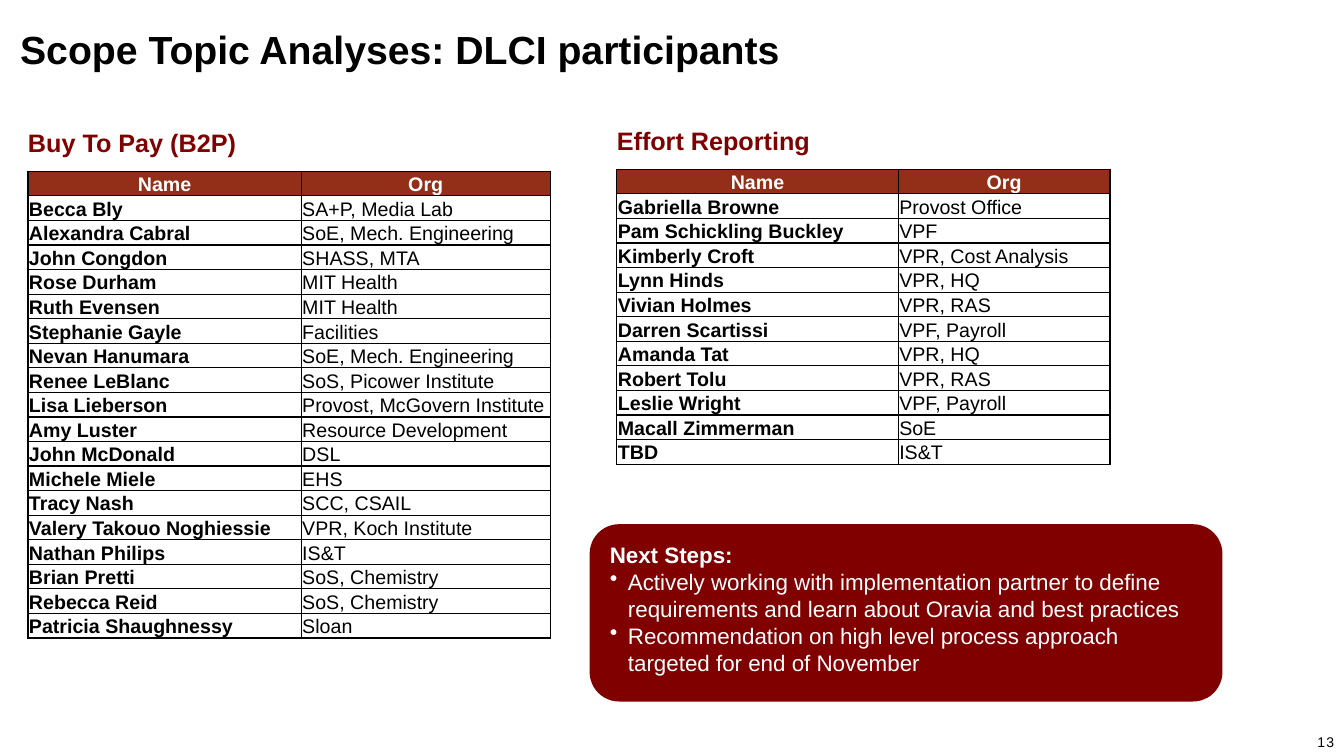
from dataclasses import dataclass

from lxml.etree import SubElement
from pptx import Presentation
from pptx.dml.color import RGBColor
from pptx.enum.shapes import MSO_SHAPE
from pptx.enum.text import MSO_ANCHOR, PP_ALIGN
from pptx.oxml.ns import qn
from pptx.util import Inches, Pt


@dataclass(frozen=True)
class Theme:
    font: str = "Arial"
    black: RGBColor = RGBColor(0, 0, 0)
    white: RGBColor = RGBColor(255, 255, 255)
    maroon: RGBColor = RGBColor(0x80, 0, 0)
    rust: RGBColor = RGBColor(0x93, 0x2F, 0x18)
    title: int = 28
    heading: int = 18
    body: int = 16
    table: int = 14
    number: int = 10


THEME = Theme()
WIDTH, HEIGHT = Inches(13.33), Inches(7.5)
COLUMN, ROW = WIDTH / 48, HEIGHT / 31.25

B2P = [
    ("Becca Bly", "SA+P, Media Lab"),
    ("Alexandra Cabral", "SoE, Mech. Engineering"),
    ("John Congdon", "SHASS, MTA"),
    ("Rose Durham", "MIT Health"),
    ("Ruth Evensen", "MIT Health"),
    ("Stephanie Gayle", "Facilities"),
    ("Nevan Hanumara", "SoE, Mech. Engineering"),
    ("Renee LeBlanc", "SoS, Picower Institute"),
    ("Lisa Lieberson", "Provost, McGovern Institute"),
    ("Amy Luster", "Resource Development"),
    ("John McDonald", "DSL"),
    ("Michele Miele", "EHS"),
    ("Tracy Nash", "SCC, CSAIL"),
    ("Valery Takouo Noghiessie", "VPR, Koch Institute"),
    ("Nathan Philips", "IS&T"),
    ("Brian Pretti", "SoS, Chemistry"),
    ("Rebecca Reid", "SoS, Chemistry"),
    ("Patricia Shaughnessy", "Sloan"),
]
EFFORT = [
    ("Gabriella Browne", "Provost Office"),
    ("Pam Schickling Buckley", "VPF"),
    ("Kimberly Croft", "VPR, Cost Analysis"),
    ("Lynn Hinds", "VPR, HQ"),
    ("Vivian Holmes", "VPR, RAS"),
    ("Darren Scartissi", "VPF, Payroll"),
    ("Amanda Tat", "VPR, HQ"),
    ("Robert Tolu", "VPR, RAS"),
    ("Leslie Wright", "VPF, Payroll"),
    ("Macall Zimmerman", "SoE"),
    ("TBD", "IS&T"),
]
NEXT_STEPS = [
    "Actively working with implementation partner to define requirements "
    "and learn about Oravia and best practices",
    "Recommendation on high level process approach targeted for end of November",
]


def grid(left, top, width, height):
    return [round(n * unit) for n, unit in zip((left, top, width, height), (COLUMN, ROW) * 2)]


def style(para, size, color, bold=False, align=PP_ALIGN.LEFT):
    para.alignment = align
    font = para.font
    font.name, font.size, font.bold = THEME.font, Pt(size), bold
    font.color.rgb = color


def add_text(page, box, lines, margin_left=0.0):
    frame = page.shapes.add_textbox(*grid(*box)).text_frame
    frame.word_wrap = True
    frame.margin_left = Inches(margin_left)
    frame.text = "\n".join(lines)
    return frame.paragraphs


def add_bullet(para):
    properties = para._p.get_or_add_pPr()
    indent = Inches(0.18)
    properties.set("marL", str(indent))
    properties.set("indent", str(-indent))
    SubElement(properties, qn("a:buChar"), char="•")


def add_borders(cell):
    properties = cell._tc.get_or_add_tcPr()
    for side in ("L", "R", "T", "B"):
        line = SubElement(properties, qn(f"a:ln{side}"), w=str(Pt(1)))
        fill = SubElement(line, qn("a:solidFill"))
        SubElement(fill, qn("a:srgbClr"), val=str(THEME.black))


def fill_cell(cell, text, header, bold):
    add_borders(cell)
    cell.fill.solid()
    cell.fill.fore_color.rgb = THEME.rust if header else THEME.white
    cell.margin_left = cell.margin_right = cell.margin_top = Inches(0.01)
    cell.margin_bottom = 0
    cell.vertical_anchor = MSO_ANCHOR.BOTTOM
    cell.text = text
    style(
        cell.text_frame.paragraphs[0],
        THEME.table,
        THEME.white if header else THEME.black,
        bold,
        PP_ALIGN.CENTER if header else PP_ALIGN.LEFT,
    )


def add_title(page, box, text):
    title = page.shapes.title
    title.left, title.top, title.width, title.height = grid(*box)
    frame = title.text_frame
    frame.margin_left = frame.margin_right = frame.margin_top = frame.margin_bottom = 0
    frame.vertical_anchor = MSO_ANCHOR.MIDDLE
    frame.text = text
    para = frame.paragraphs[0]
    para.line_spacing = 0.9
    para.space_after = Pt(12)
    style(para, THEME.title, THEME.black, True)


def add_participants(page, left, top, widths, heading, people):
    title = add_text(page, (left, top, sum(widths), 1.67), [heading])
    style(title[0], THEME.heading, THEME.maroon, True)
    rows = [("Name", "Org"), *people]
    box = grid(left, top + 2.02, sum(widths), len(rows))
    table = page.shapes.add_table(len(rows), len(widths), *box).table
    table.horz_banding = False
    for column, width in zip(table.columns, widths):
        column.width = round(width * COLUMN)
    for number, row in enumerate(rows):
        table.rows[number].height = round(ROW)
        for place, text in enumerate(row):
            header = number == 0
            fill_cell(table.cell(number, place), text, header, header or place == 0)


def add_next_steps(page, left, top, width, height):
    panel = page.shapes.add_shape(MSO_SHAPE.ROUNDED_RECTANGLE, *grid(left, top, width, height))
    panel.shadow.inherit = False
    panel.fill.solid()
    panel.fill.fore_color.rgb = THEME.maroon
    panel.line.fill.background()
    box = (left + 0.72, top + 0.5, width - 1.5, height - 1.29)
    heading, *steps = add_text(page, box, ["Next Steps:", *NEXT_STEPS])
    style(heading, THEME.body, THEME.white, True)
    for step in steps:
        add_bullet(step)
        style(step, THEME.body, THEME.white)


def add_page_number(page, box, number):
    para = add_text(page, box, [number], 0.1)[0]
    para.runs[0]._r.get_or_add_rPr().set("spc", "80")
    style(para, THEME.number, THEME.black, align=PP_ALIGN.RIGHT)


def main():
    deck = Presentation()
    deck.slide_width, deck.slide_height = WIDTH, HEIGHT
    page = deck.slides.add_slide(deck.slide_layouts[5])
    add_title(page, (0.72, 1.12, 44.4, 2), "Scope Topic Analyses: DLCI participants")
    add_participants(page, 1, 5.06, (9.76, 8.89), "Buy To Pay (B2P)", B2P)
    add_participants(page, 22.03, 4.98, (10.05, 7.56), "Effort Reporting", EFFORT)
    add_next_steps(page, 21.06, 21.67, 22.6, 7.33)
    add_page_number(page, (46, 30.12, 2, 1.13), "13")
    deck.save("out.pptx")


if __name__ == "__main__":
    main()
